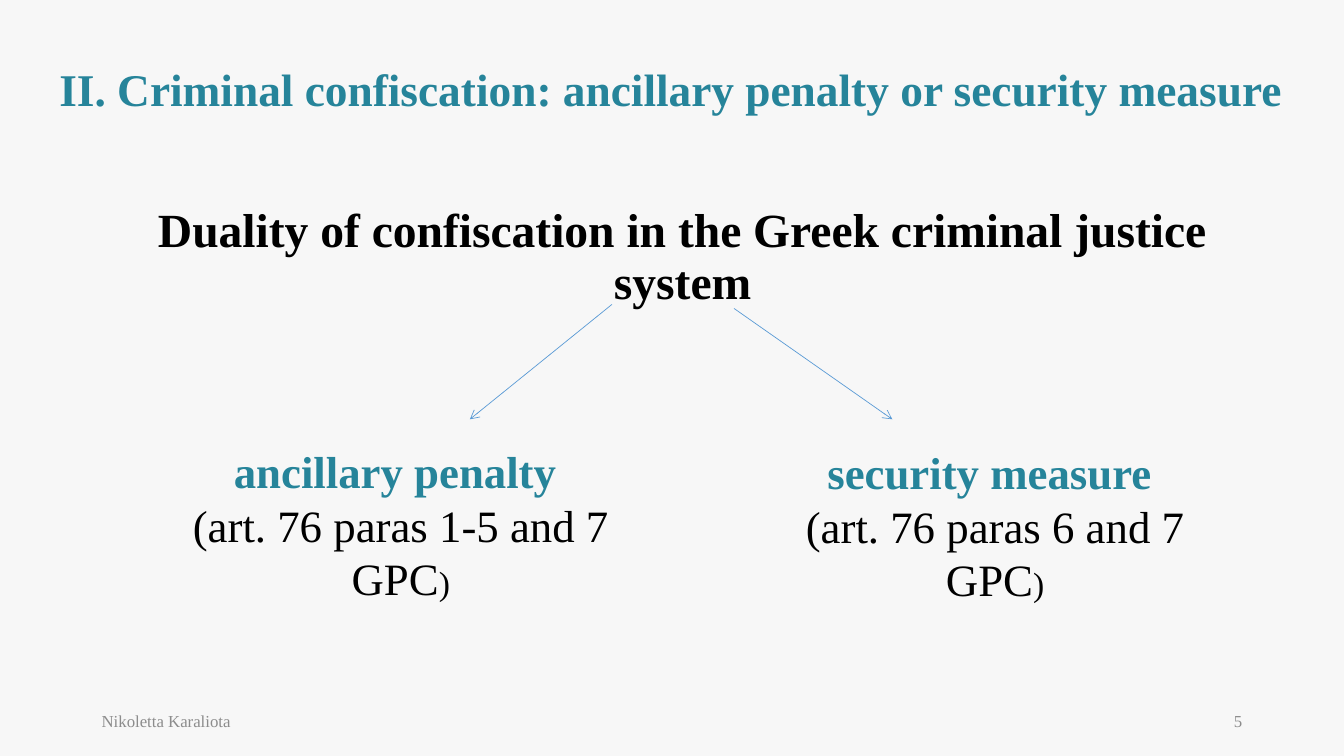
"""Build a slide on the two forms of criminal confiscation in Greek law."""
import pptx
import pptx.dml.color
import pptx.enum.shapes
import pptx.enum.text
import pptx.oxml.ns
import pptx.util
from lxml import etree

Inches = pptx.util.Inches
RGBColor = pptx.dml.color.RGBColor
Align = pptx.enum.text.PP_ALIGN
Anchor = pptx.enum.text.MSO_ANCHOR

PAPER = RGBColor(0xF7, 0xF7, 0xF7)
TEAL = RGBColor(0x26, 0x84, 0x9A)
BLACK = RGBColor(0, 0, 0)
GREY = RGBColor(0x8C, 0x8C, 0x8C)
BLUE = RGBColor(0x5B, 0x9B, 0xD5)


def add_box(page, left, top, width, height, anchor):
    box = page.shapes.add_textbox(Inches(left), Inches(top), Inches(width), Inches(height))
    box.text_frame.word_wrap = True
    box.text_frame.vertical_anchor = anchor
    return box.text_frame


def add_run(para, text, size, color, bold=False):
    span = para.add_run()
    span.text = text
    span.font.name = "Times New Roman"
    span.font.size = pptx.util.Pt(size)
    span.font.bold = bold
    span.font.color.rgb = color


deck = pptx.Presentation()
deck.slide_width = Inches(13.33)
deck.slide_height = Inches(7.5)
page = deck.slides.add_slide(deck.slide_layouts[6])
page.background.fill.solid()
page.background.fill.fore_color.rgb = PAPER

title = add_box(page, 0.49, 0.21, 12.63, 1.41, Anchor.MIDDLE).paragraphs[0]
title.line_spacing = 0.9
add_run(title, "ΙΙ. Criminal confiscation: ancillary penalty or security measure", 32.4, TEAL, True)

statement = add_box(page, 0.92, 2, 11.7, 4.76, Anchor.TOP).paragraphs[0]
statement.alignment = Align.CENTER
statement.line_spacing = 0.9
statement.space_before = pptx.util.Pt(10)
add_run(statement, "Duality of confiscation in the Greek criminal justice system", 34, BLACK, True)

for start_x, start_y, end_x in [(6.07, 3.02, 4.66), (7.28, 3.06, 8.85)]:
    arrow = page.shapes.add_connector(
        pptx.enum.shapes.MSO_CONNECTOR.STRAIGHT,
        Inches(start_x), Inches(start_y), Inches(end_x), Inches(4.16))
    arrow.line.color.rgb = BLUE
    arrow.line.width = pptx.util.Pt(0.5)
    etree.SubElement(arrow.line._get_or_add_ln(), pptx.oxml.ns.qn("a:tailEnd"), type="arrow")
    etree.SubElement(arrow._element.spPr, pptx.oxml.ns.qn("a:effectLst"))

branches = [
    (1.33, 4.35, 5.29, "ancillary penalty ", "(art. 76 paras 1-5 and 7 GPC"),
    (7.4, 4.36, 4.94, "security measure ", "(art. 76 paras 6 and 7 GPC"),
]
for left, top, width, name, article in branches:
    frame = add_box(page, left, top, width, 1.18, Anchor.TOP)
    heading = frame.paragraphs[0]
    heading.alignment = Align.CENTER
    add_run(heading, name, 32, TEAL, True)
    source = frame.add_paragraph()
    source.alignment = Align.CENTER
    add_run(source, article, 32, BLACK)
    add_run(source, ")", 24, BLACK)

footers = [
    (0.91, 4.5, Align.LEFT, "Nikoletta Karaliota"),
    (9.42, 3, Align.RIGHT, "5"),
]
for left, width, alignment, text in footers:
    footer = add_box(page, left, 6.95, width, 0.4, Anchor.MIDDLE).paragraphs[0]
    footer.alignment = alignment
    add_run(footer, text, 12, GREY)

deck.save("out.pptx")
